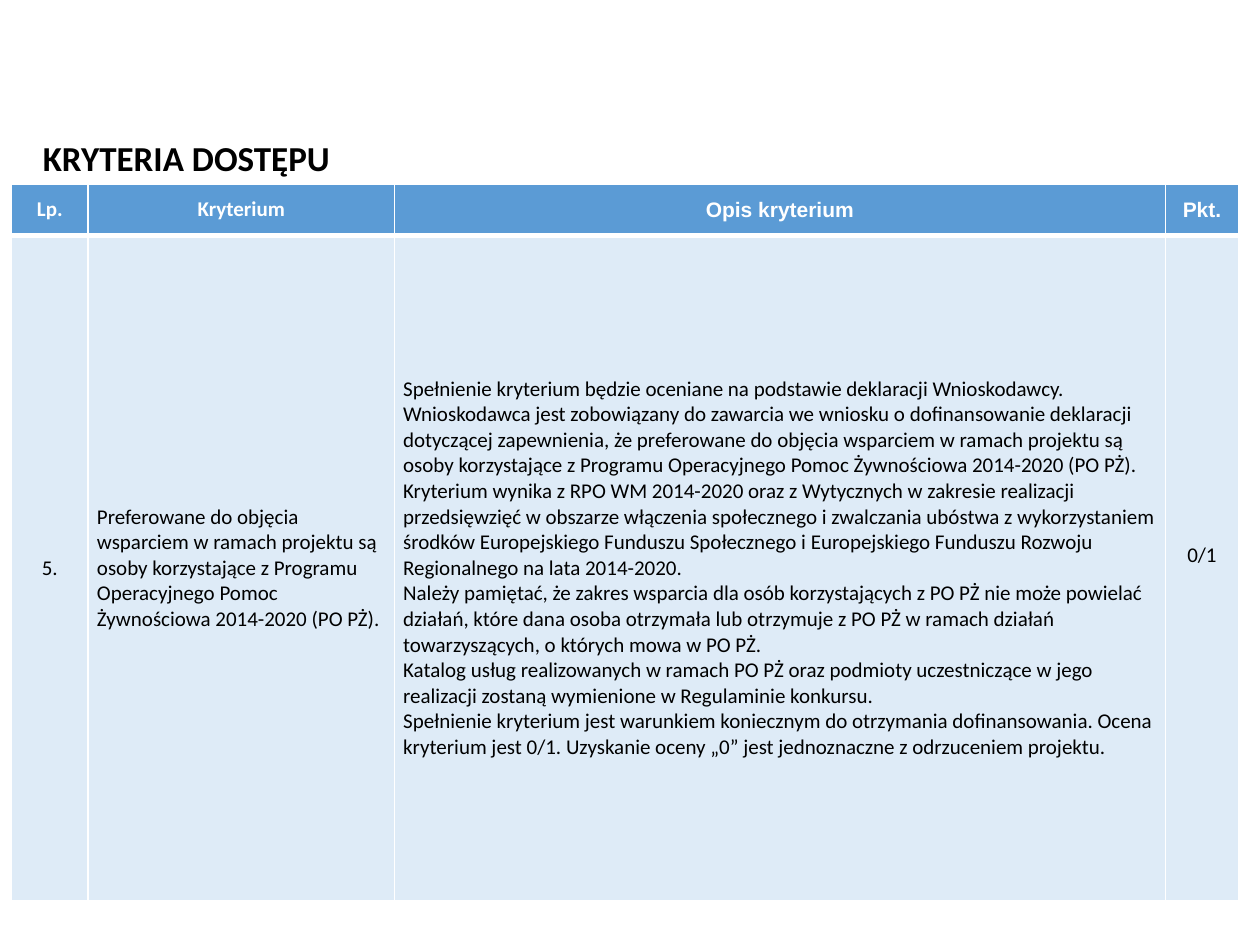
from pptx import Presentation
from pptx.dml.color import RGBColor
from pptx.enum.text import MSO_ANCHOR as Anchor, MSO_AUTO_SIZE as AutoSize, PP_ALIGN as Align
from pptx.oxml.ns import qn
from pptx.util import Inches, Pt
from lxml.etree import SubElement

WHITE, BLACK = "FFFFFF", "000000"
HEADER_BLUE, BODY_BLUE = "5B9BD5", "DEEBF7"
COLUMN_WIDTHS = [0.61, 2.43, 6.12, 0.58]
ROW_HEIGHTS = [0.41, 5.28]

HEADINGS = [("Lp.", "Calibri"), ("Kryterium", "Calibri"), ("Opis kryterium", "Arial"), ("Pkt.", "Arial")]
CRITERION = ("Preferowane do objęcia wsparciem w ramach projektu są osoby korzystające z Programu "
             "Operacyjnego Pomoc Żywnościowa 2014-2020 (PO PŻ).")
DESCRIPTION = [
    "Spełnienie kryterium będzie oceniane na podstawie deklaracji Wnioskodawcy. Wnioskodawca jest "
    "zobowiązany do zawarcia we wniosku o dofinansowanie deklaracji dotyczącej zapewnienia, że "
    "preferowane do objęcia wsparciem w ramach projektu są osoby korzystające z Programu "
    "Operacyjnego Pomoc Żywnościowa 2014-2020 (PO PŻ).",
    "Kryterium wynika z RPO WM 2014-2020 oraz z Wytycznych w zakresie realizacji przedsięwzięć w "
    "obszarze włączenia społecznego i zwalczania ubóstwa z wykorzystaniem środków Europejskiego "
    "Funduszu Społecznego i Europejskiego Funduszu Rozwoju Regionalnego na lata 2014-2020.",
    "Należy pamiętać, że zakres wsparcia dla osób korzystających z PO PŻ nie może powielać działań, "
    "które dana osoba otrzymała lub otrzymuje z PO PŻ w ramach działań towarzyszących, o których "
    "mowa w PO PŻ.",
    "Katalog usług realizowanych w ramach PO PŻ oraz podmioty uczestniczące w jego realizacji "
    "zostaną wymienione w Regulaminie konkursu.",
    "Spełnienie kryterium jest warunkiem koniecznym do otrzymania dofinansowania. Ocena kryterium "
    "jest 0/1. Uzyskanie oceny „0” jest jednoznaczne z odrzuceniem projektu.",
]
TEXT_INSETS = {"margin_left": Inches(0.07), "margin_right": Inches(0.07),
               "margin_top": 0, "margin_bottom": 0}
BODY = [
    ([("5.")], Align.CENTER, {}),
    ([CRITERION], Align.LEFT, TEXT_INSETS),
    (DESCRIPTION, Align.LEFT, TEXT_INSETS),
    (["0/1"], Align.CENTER, {**TEXT_INSETS, "margin_bottom": Inches(0.2)}),
]


def rgb(code):
    return RGBColor.from_string(code)


def apply(target, values):
    for name, value in values.items():
        setattr(target, name, value)


def write(frame, lines, align, color, **font):
    frame.text = "\n".join(lines)
    for paragraph in frame.paragraphs:
        paragraph.alignment = align
        for run in paragraph.runs:
            apply(run.font, font)
            run.font.color.rgb = rgb(color)


def draw_borders(cell, widths):
    properties = cell._tc.get_or_add_tcPr()
    for side, width in zip("LRTB", widths):
        border = SubElement(properties, qn(f"a:ln{side}"), w=str(Pt(width)))
        SubElement(SubElement(border, qn("a:solidFill")), qn("a:srgbClr"), val=WHITE)


def fill_cell(cell, lines, align, insets, fill, borders, color, **font):
    draw_borders(cell, borders)
    cell.fill.solid()
    cell.fill.fore_color.rgb = rgb(fill)
    apply(cell, {"vertical_anchor": Anchor.MIDDLE, **insets})
    write(cell.text_frame, lines, align, color, size=Pt(12), **font)


def add_heading(slide, left, top, width, height):
    heading = slide.shapes.title
    apply(heading, {"left": left, "top": top, "width": width, "height": height})
    apply(heading.text_frame, {"word_wrap": True, "auto_size": AutoSize.NONE,
                               "vertical_anchor": Anchor.MIDDLE})
    write(heading.text_frame, ["KRYTERIA DOSTĘPU"], Align.LEFT, BLACK,
          size=Pt(20), name="Calibri", bold=True)


def add_criteria(slide, left, top, width, height):
    criteria = slide.shapes.add_table(2, 4, left, top, width, height).table
    for column, size in zip(criteria.columns, COLUMN_WIDTHS):
        column.width = Inches(size)
    for row, size in zip(criteria.rows, ROW_HEIGHTS):
        row.height = Inches(size)
    for index, (label, typeface) in enumerate(HEADINGS):
        fill_cell(criteria.cell(0, index), [label], Align.CENTER, {}, HEADER_BLUE,
                  (1, 1, 1, 3), WHITE, name=typeface, bold=True)
    for index, (lines, align, insets) in enumerate(BODY):
        fill_cell(criteria.cell(1, index), lines, align, insets, BODY_BLUE,
                  (1, 1, 3, 1), BLACK, name="Calibri", bold=False)


def main():
    deck = Presentation()
    apply(deck, {"slide_width": Inches(10), "slide_height": Inches(7.5)})
    slide = deck.slides.add_slide(deck.slide_layouts[5])
    add_criteria(slide, Inches(0.09), Inches(1.46), Inches(sum(COLUMN_WIDTHS)), Inches(sum(ROW_HEIGHTS)))
    add_heading(slide, Inches(0.24), Inches(1.03), Inches(3.69), Inches(0.44))
    deck.save("out.pptx")


if __name__ == "__main__":
    main()
